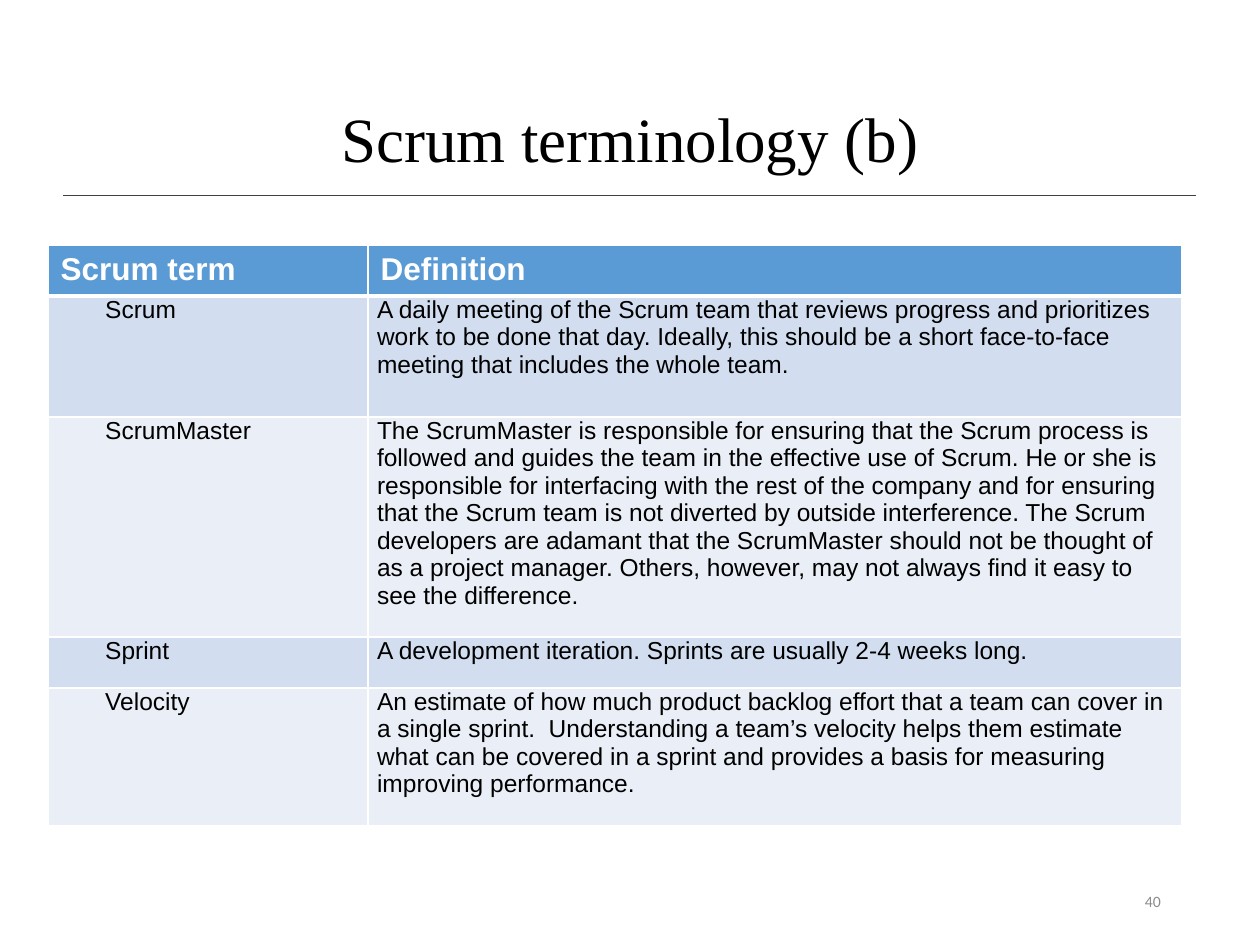
from lxml import etree
from pptx import Presentation
from pptx import util as u
from pptx.dml.color import RGBColor
from pptx.enum import shapes, text
from pptx.oxml.ns import qn

HEADINGS = ("Scrum term", "Definition")
TERMS = (
    ("Scrum", "A daily meeting of the Scrum team that reviews progress and prioritizes "
     "work to be done that day. Ideally, this should be a short face-to-face meeting "
     "that includes the whole team."),
    ("ScrumMaster", "The ScrumMaster is responsible for ensuring that the Scrum process is "
     "followed and guides the team in the effective use of Scrum. He or she is responsible "
     "for interfacing with the rest of the company and for ensuring that the Scrum team is "
     "not diverted by outside interference. The Scrum developers are adamant that the "
     "ScrumMaster should not be thought of as a project manager. Others, however, may not "
     "always find it easy to see the difference."),
    ("Sprint", "A development iteration. Sprints are usually 2-4 weeks long."),
    ("Velocity", "An estimate of how much product backlog effort that a team can cover in a "
     "single sprint.  Understanding a team’s velocity helps them estimate what can be covered "
     "in a sprint and provides a basis for measuring improving performance."),
)
COLUMN_WIDTHS = (6.45, 16.41)
ROW_HEIGHTS = (1.0, 2.44, 4.43, 1.03, 2.77)
BANDS = ("D2DEEF", "EAEFF7")


def color(hex_code):
    """Turn a hex string into a colour."""
    return RGBColor.from_string(hex_code)


def style(paragraph, face, size, hex_code, bold=False):
    """Set the font of a whole paragraph."""
    font = paragraph.font
    font.name, font.size, font.bold = face, u.Pt(size), bold
    font.color.rgb = color(hex_code)


def add_label(slide, wording, box, face, size, hex_code, align):
    """Add a one-paragraph text box, centred vertically."""
    frame = slide.shapes.add_textbox(*map(u.Cm, box)).text_frame
    frame.word_wrap = True
    frame.vertical_anchor = text.MSO_ANCHOR.MIDDLE
    paragraph = frame.paragraphs[0]
    paragraph.text, paragraph.alignment = wording, align
    style(paragraph, face, size, hex_code)
    return paragraph


def add_rule(slide, left, right, top):
    """Add the horizontal line under the title."""
    rule = slide.shapes.add_connector(
        shapes.MSO_CONNECTOR.STRAIGHT, u.Cm(left), u.Cm(top), u.Cm(right), u.Cm(top))
    rule.line.color.rgb = color("404040")
    rule.line.width = u.Pt(1)
    etree.SubElement(rule._element.spPr, qn("a:effectLst"))


def paint_cell(cell, hex_code, top=1, bottom=1):
    """Give a cell white borders and a solid fill."""
    properties = cell._tc.get_or_add_tcPr()
    for side, width in (("L", 1), ("R", 1), ("T", top), ("B", bottom)):
        border = etree.SubElement(properties, qn(f"a:ln{side}"), w=str(u.Pt(width)))
        fill = etree.SubElement(border, qn("a:solidFill"))
        etree.SubElement(fill, qn("a:srgbClr"), val="FFFFFF")
    cell.fill.solid()
    cell.fill.fore_color.rgb = color(hex_code)


def fill_heading(cell, heading):
    """Write one heading cell."""
    paint_cell(cell, "5B9BD5", bottom=3)
    cell.text = heading
    style(cell.text_frame.paragraphs[0], "Arial", 18, "FFFFFF", bold=True)


def fill_entry(cell, wording, row, indent):
    """Write one term or definition cell."""
    paint_cell(cell, BANDS[(row - 1) % 2], top=3 if row == 1 else 1)
    cell.margin_left = cell.margin_right = u.Cm(0.18)
    cell.margin_top = cell.margin_bottom = 0
    cell.text = wording
    paragraph = cell.text_frame.paragraphs[0]
    style(paragraph, "Arial", 14, "000000")
    paragraph._p.get_or_add_pPr().set("indent", str(u.Cm(indent)))
    if row == 1:
        paragraph.space_after = u.Pt(6)


def add_glossary(slide, left, top):
    """Add the table of terms and definitions."""
    glossary = slide.shapes.add_table(
        len(ROW_HEIGHTS), len(COLUMN_WIDTHS), u.Cm(left), u.Cm(top),
        u.Cm(sum(COLUMN_WIDTHS)), u.Cm(sum(ROW_HEIGHTS))).table
    for column, width in zip(glossary.columns, COLUMN_WIDTHS):
        column.width = u.Cm(width)
    for row, height in zip(glossary.rows, ROW_HEIGHTS):
        row.height = u.Cm(height)
    for column, heading in enumerate(HEADINGS):
        fill_heading(glossary.cell(0, column), heading)
    for row, (term, definition) in enumerate(TERMS, start=1):
        fill_entry(glossary.cell(row, 0), term, row, indent=0.97)
        fill_entry(glossary.cell(row, 1), definition, row, indent=0)


def main():
    """Build and save the slide."""
    deck = Presentation()
    deck.slide_width, deck.slide_height = u.Cm(25.4), u.Cm(19.05)
    slide = deck.slides.add_slide(deck.slide_layouts[6])
    add_rule(slide, 1.27, 24.1, 3.94)
    title = add_label(slide, "Scrum terminology (b)", (1.75, 1.02, 21.9, 3.68),
                      "Times New Roman", 36, "000000", text.PP_ALIGN.CENTER)
    title.line_spacing = 0.9
    add_glossary(slide, 0.97, 4.95)
    add_label(slide, "40", (17.93, 17.65, 5.72, 1.02),
              "Calibri", 9, "8C8C8C", text.PP_ALIGN.RIGHT)
    deck.save("out.pptx")


if __name__ == "__main__":
    main()
